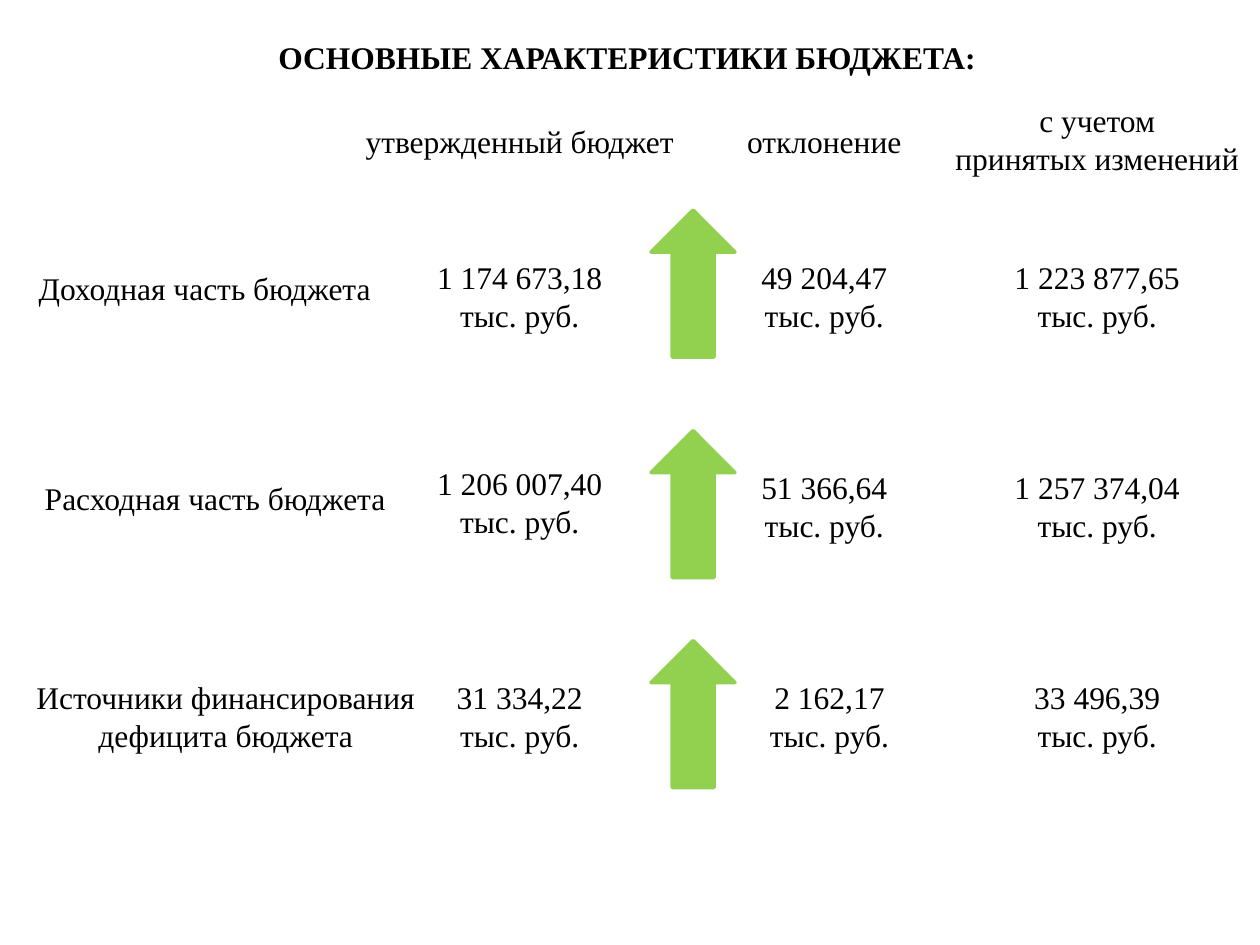
"""Build the slide with the main figures of the budget."""
from dataclasses import dataclass

from pptx import Presentation
from pptx.dml.color import RGBColor
from pptx.enum.shapes import MSO_SHAPE as Shape
from pptx.enum.text import MSO_ANCHOR as Anchor, MSO_AUTO_SIZE as AutoSize, PP_ALIGN as Align
from pptx.slide import Slide
from pptx.util import Pt

BLACK = RGBColor(0x00, 0x00, 0x00)
GREEN = RGBColor(0x92, 0xD0, 0x50)
UNIT = "тыс. руб."
ONE_LINE, TWO_LINES = 29, 51

HEADERS = (
    ("утвержденный бюджет", 198, 66, 198, ONE_LINE),
    ("отклонение", 414, 66, 114, ONE_LINE),
    ("с учетом\nпринятых изменений", 534, 54, 186, TWO_LINES),
)
LABELS = (
    ("Доходная часть бюджета", 12, 150, 210, ONE_LINE),
    ("Расходная часть бюджета", 18, 270, 210, ONE_LINE),
    ("Источники финансирования дефицита бюджета", 12, 384, 234, TWO_LINES),
)
APPROVED = (("1 174 673,18", 144), ("1 206 007,40", 261.5), ("31 334,22", 384))
DEVIATIONS = (("49 204,47", 144, 90), ("51 366,64", 264, 90), ("2 162,17", 384, 96))
AMENDED = (("1 223 877,65", 144), ("1 257 374,04", 264), ("33 496,39", 384))
ARROW_TOPS = (120, 246, 366)


def write_text(frame, text, *, font="Times New Roman", size=18, color=BLACK, bold=False, wrap=True):
    frame.text = text
    frame.word_wrap = wrap
    frame.auto_size = AutoSize.NONE
    frame.vertical_anchor = Anchor.TOP
    for paragraph in frame.paragraphs:
        paragraph.alignment = Align.CENTER
        paragraph.font.name = font
        paragraph.font.size = Pt(size)
        paragraph.font.color.rgb = color
        paragraph.font.bold = bold


@dataclass
class BudgetSlide:
    slide: Slide
    arrow_color: RGBColor = GREEN
    arrow_line: float = 2

    def title(self, text, left, top, width, height):
        shape = self.slide.shapes.title
        shape.left, shape.top, shape.width, shape.height = map(Pt, (left, top, width, height))
        write_text(shape.text_frame, text, bold=True, wrap=False)

    def text(self, text, left, top, width, height):
        shape = self.slide.shapes.add_textbox(Pt(left), Pt(top), Pt(width), Pt(height))
        write_text(shape.text_frame, text)

    def amount(self, value, left, top, width):
        self.text(f"{value}\n{UNIT}", left, top, width, TWO_LINES)

    def arrow(self, left, top, width, height):
        shape = self.slide.shapes.add_shape(
            Shape.DOWN_ARROW, Pt(left), Pt(top), Pt(width), Pt(height))
        shape.rotation = 180
        shape.shadow.inherit = False
        shape.fill.solid()
        shape.fill.fore_color.rgb = self.arrow_color
        shape.line.color.rgb = self.arrow_color
        shape.line.width = Pt(self.arrow_line)


def main():
    presentation = Presentation()
    presentation.slide_width, presentation.slide_height = Pt(720), Pt(540)
    layout = presentation.slide_layouts.get_by_name("Title Only")
    budget = BudgetSlide(presentation.slides.add_slide(layout))

    budget.title("ОСНОВНЫЕ ХАРАКТЕРИСТИКИ БЮДЖЕТА:", 150, 18, 417, ONE_LINE)
    for entry in HEADERS + LABELS:
        budget.text(*entry)
    for value, top in APPROVED:
        budget.amount(value, 240, top, 114)
    for top in ARROW_TOPS:
        budget.arrow(372, top, 48, 84)
    for value, top, width in DEVIATIONS:
        budget.amount(value, 426, top, width)
    for value, top in AMENDED:
        budget.amount(value, 570, top, 114)

    presentation.save("out.pptx")


if __name__ == "__main__":
    main()
